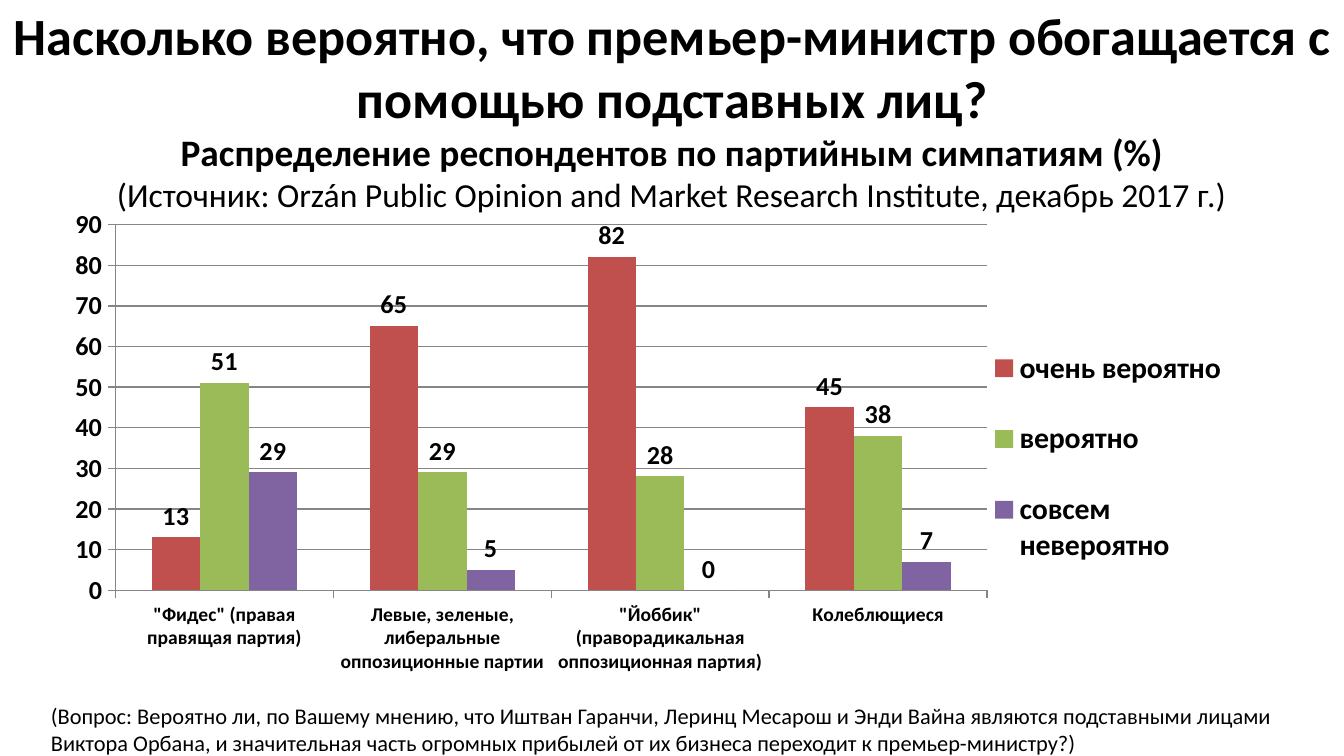
from lxml.etree import SubElement
from pptx import Presentation
from pptx.chart.data import CategoryChartData
from pptx.dml.color import RGBColor
from pptx.enum.chart import XL_CHART_TYPE, XL_LABEL_POSITION, XL_LEGEND_POSITION, XL_TICK_MARK
from pptx.enum.text import MSO_ANCHOR, MSO_AUTO_SIZE, PP_ALIGN
from pptx.oxml.ns import qn
from pptx.util import Inches, Pt

# Content
HEADING = [
    ("Насколько вероятно, что премьер-министр обогащается с помощью подставных лиц?", 28, True),
    ("Распределение респондентов по партийным симпатиям (%)", 20, True),
    ("(Источник: Orzán Public Opinion and Market Research Institute, декабрь 2017 г.)", 18, False),
]
QUESTION = (
    "(Вопрос: Вероятно ли, по Вашему мнению, что Иштван Гаранчи, Леринц Mесарош и Энди Вайна "
    "являются подставными лицами Виктора Орбана, и значительная часть огромных прибылей "
    "от их бизнеса переходит к премьер-министру?)"
)
PARTIES = [
    '"Фидес" (правая правящая партия)',
    "Левые, зеленые, либеральные оппозиционные партии",
    '"Йоббик" (праворадикальная оппозиционная партия)',
    "Колеблющиеся",
]
ANSWERS = {
    "очень вероятно": (13, 65, 82, 45),
    "вероятно": (51, 29, 28, 38),
    "совсем невероятно": (29, 5, 0, 7),
}
COLORS = {
    "text": "000000",
    "grid": "868686",
    "очень вероятно": "C0504D",
    "вероятно": "9BBB59",
    "совсем невероятно": "8064A2",
}
FONT = "Calibri"
WIDTH = 10
HEIGHT = WIDTH * 9 / 16

# Places as shares of the slide: left, top, width, height
HEADING_BOX = (0, -0.004, 1, 0.299)
CHART_BOX = (0.051, 0.276, 0.874, 0.686)
QUESTION_BOX = (0.028, 0.92, 0.945, 0.09)
# Places as shares of the chart
PLOT_BOX = (0.04, 0.023, 0.742, 0.711)
LEGEND_BOX = (0.78, 0.2, 0.21, 0.55)


def place(box):
    return [Inches(share * side) for share, side in zip(box, (WIDTH, HEIGHT) * 2)]


def style(font, size, bold=False):
    font.name, font.size, font.bold = FONT, Pt(size), bold
    font.color.rgb = RGBColor.from_string(COLORS["text"])


def write(paragraph, text, size, bold=False, align=PP_ALIGN.LEFT):
    paragraph.alignment = align
    run = paragraph.add_run()
    run.text = text
    style(run.font, size, bold)


def set_layout(element, box, inner=False):
    layout = element.find(qn("c:layout"))
    if layout is None:
        layout = SubElement(element, qn("c:layout"))
        anchor = element.find(qn("c:legendPos"))
        if anchor is None:
            element.insert(0, layout)
        else:
            anchor.addnext(layout)
    for child in list(layout):
        layout.remove(child)
    manual = SubElement(layout, qn("c:manualLayout"))
    settings = [("layoutTarget", "inner")] if inner else []
    settings += [("xMode", "edge"), ("yMode", "edge")] + list(zip("xywh", box))
    for tag, value in settings:
        SubElement(manual, qn(f"c:{tag}")).set("val", str(value))


presentation = Presentation()
presentation.slide_width, presentation.slide_height = Inches(WIDTH), Inches(HEIGHT)
slide = presentation.slides.add_slide(presentation.slide_layouts[5])

# Heading
heading = slide.shapes.title
heading.left, heading.top, heading.width, heading.height = place(HEADING_BOX)
frame = heading.text_frame
frame.auto_size, frame.vertical_anchor = MSO_AUTO_SIZE.NONE, MSO_ANCHOR.TOP
for index, (text, size, bold) in enumerate(HEADING):
    paragraph = frame.add_paragraph() if index else frame.paragraphs[0]
    write(paragraph, text, size, bold=bold, align=PP_ALIGN.CENTER)

# Survey question
question = slide.shapes.add_textbox(*place(QUESTION_BOX)).text_frame
question.word_wrap = True
write(question.paragraphs[0], QUESTION, 12)

# Chart of answers by party
data = CategoryChartData()
data.categories = PARTIES
for answer, shares in ANSWERS.items():
    data.add_series(answer, shares)
chart = slide.shapes.add_chart(XL_CHART_TYPE.COLUMN_CLUSTERED, *place(CHART_BOX), data).chart
chart.has_title = False
style(chart.font, 10)

plot = chart.plots[0]
plot.gap_width, plot.overlap, plot.vary_by_categories = 150, 0, False
for series in plot.series:
    series.format.fill.solid()
    series.format.fill.fore_color.rgb = RGBColor.from_string(COLORS[series.name])
    labels = series.data_labels
    labels.show_value = True
    labels.position = XL_LABEL_POSITION.OUTSIDE_END
    style(labels.font, 14, bold=True)

# Axes
shares_axis = chart.value_axis
shares_axis.minimum_scale, shares_axis.maximum_scale, shares_axis.major_unit = 0, 90, 10
shares_axis.has_major_gridlines = True
for axis, size in ((chart.category_axis, 10.5), (shares_axis, 14)):
    axis.major_tick_mark = XL_TICK_MARK.OUTSIDE
    style(axis.tick_labels.font, size, bold=True)
for lines in (chart.category_axis, shares_axis, shares_axis.major_gridlines):
    lines.format.line.color.rgb = RGBColor.from_string(COLORS["grid"])
    lines.format.line.width = Pt(0.75)

# Legend and inner layout
chart.has_legend = True
legend = chart.legend
legend.position, legend.include_in_layout = XL_LEGEND_POSITION.RIGHT, False
style(legend.font, 16, bold=True)
chart_part = legend._element.getparent()
set_layout(legend._element, LEGEND_BOX)
set_layout(chart_part.find(qn("c:plotArea")), PLOT_BOX, inner=True)

presentation.save("out.pptx")
